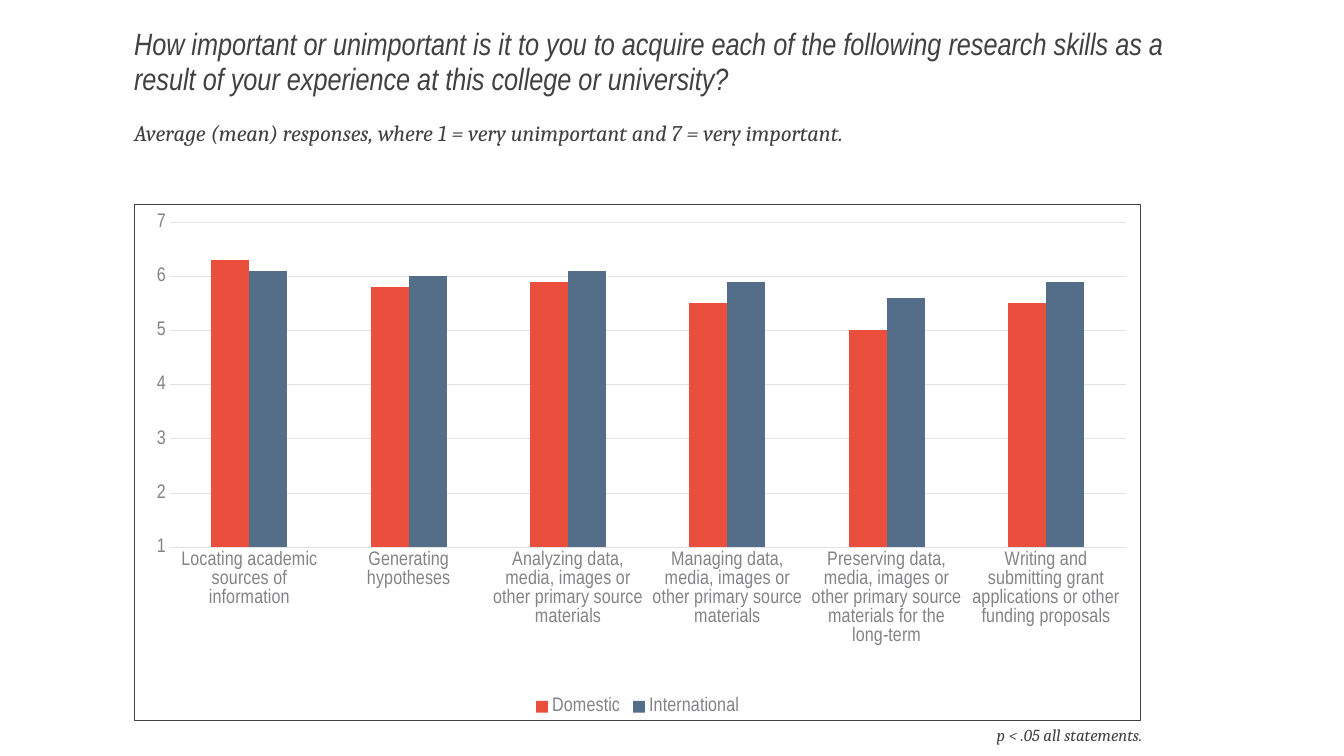
from dataclasses import dataclass

from lxml import etree
from pptx import Presentation
from pptx import util as u
from pptx.chart.data import CategoryChartData
from pptx.dml.color import RGBColor
from pptx.enum import chart as ch
from pptx.enum import text as tx
from pptx.oxml import parse_xml
from pptx.oxml.ns import nsdecls, qn


@dataclass(frozen=True)
class Theme:
    ink: str = "414042"
    grey: str = "838285"
    rule: str = "E2E2E3"
    bars: tuple = ("E94F3C", "546D89")
    sans: str = "Arial Narrow"
    serif: str = "Cambria"
    head: int = 22
    sub: int = 16
    label: int = 14
    note: int = 12
    base: int = 10
    thin: float = 0.75


def assign(item, values):
    for key, value in values.items():
        setattr(item, key, value)


class Deck:
    def __init__(self, theme):
        self.theme = theme
        self.deck = Presentation()
        assign(self.deck, {"slide_width": u.Inches(13.33), "slide_height": u.Inches(7.5)})
        self.slide = self.deck.slides.add_slide(self.deck.slide_layouts[5])

    def font(self, font, name, size, color, italic=False):
        assign(font, {"name": name, "size": u.Pt(size), "bold": False, "italic": italic})
        font.color.rgb = RGBColor.from_string(color)

    def line(self, line, color):
        line.color.rgb = RGBColor.from_string(color)
        line.width = u.Pt(self.theme.thin)

    def fill(self, shape, words, name, size, top=0, low=0, **para):
        frame = shape.text_frame
        assign(frame, {
            "word_wrap": True, "auto_size": tx.MSO_AUTO_SIZE.NONE,
            "vertical_anchor": tx.MSO_ANCHOR.TOP,
            "margin_left": 0, "margin_right": 0,
            "margin_top": u.Inches(top), "margin_bottom": u.Inches(low)})
        first = frame.paragraphs[0]
        assign(first, {"alignment": tx.PP_ALIGN.LEFT, **para})
        run = first.add_run()
        run.text = words
        self.font(run.font, name, size, self.theme.ink, True)
        return frame

    def title(self, box, words):
        shape = self.slide.shapes.title
        assign(shape, dict(zip(("left", "top", "width", "height"), map(u.Inches, box))))
        self.fill(shape, words, self.theme.sans, self.theme.head, line_spacing=0.95)

    def text(self, box, words, size, **form):
        shape = self.slide.shapes.add_textbox(*map(u.Inches, box))
        return self.fill(shape, words, self.theme.serif, size, **form)

    def axis(self, axis, values):
        assign(axis, {"major_tick_mark": ch.XL_TICK_MARK.NONE,
                      "minor_tick_mark": ch.XL_TICK_MARK.NONE, **values})
        self.font(axis.tick_labels.font, self.theme.sans, self.theme.label, self.theme.grey)

    def chart(self, box, names, rows, plot):
        theme = self.theme
        data = CategoryChartData(number_format="General")
        data.categories = names
        for name, values in rows.items():
            data.add_series(name, values)
        chart = self.slide.shapes.add_chart(
            ch.XL_CHART_TYPE.COLUMN_CLUSTERED, *map(u.Inches, box), data).chart
        assign(chart, {"has_title": False, "has_legend": True})
        self.font(chart.font, theme.serif, theme.base, theme.ink)
        assign(chart.legend, {"position": ch.XL_LEGEND_POSITION.BOTTOM,
                              "include_in_layout": False})
        self.font(chart.legend.font, theme.sans, theme.label, theme.grey)

        self.axis(chart.category_axis, {"has_major_gridlines": False})
        self.line(chart.category_axis.format.line, theme.rule)
        scale = chart.value_axis
        self.axis(scale, {"minimum_scale": 1, "maximum_scale": 7, "major_unit": 1,
                          "has_major_gridlines": True})
        scale.format.line.fill.background()
        self.line(scale.major_gridlines.format.line, theme.rule)

        group = chart.plots[0]
        assign(group, {"gap_width": 219, "overlap": 0, "vary_by_categories": False})
        for bar, color in zip(group.series, theme.bars):
            bar.format.fill.solid()
            bar.format.fill.fore_color.rgb = RGBColor.from_string(color)
        self.place(chart, plot)
        self.frame(chart)

    def place(self, chart, plot):
        area = chart._chartSpace.chart.plotArea
        for old in area.findall(qn("c:layout")):
            area.remove(old)
        layout = parse_xml(f'<c:layout {nsdecls("c")}><c:manualLayout/></c:layout>')
        parts = [("layoutTarget", "inner"), ("xMode", "edge"), ("yMode", "edge")]
        for tag, value in parts + list(zip("xywh", plot)):
            etree.SubElement(layout[0], qn(f"c:{tag}")).set("val", str(value))
        area.insert(0, layout)

    def frame(self, chart):
        theme = self.theme
        chart._chartSpace.chart.addnext(parse_xml(
            f'<c:spPr {nsdecls("c", "a")}><a:noFill/><a:ln w="{u.Pt(theme.thin)}">'
            f'<a:solidFill><a:srgbClr val="{theme.ink}"/></a:solidFill></a:ln></c:spPr>'))


def main():
    theme = Theme()
    deck = Deck(theme)
    left, wide = 1.33, 9.99
    deck.title((left, 0.27, 10.66, 0.94),
               "How important or unimportant is it to you to acquire each of the following "
               "research skills as a result of your experience at this college or university?")
    lead = deck.text((left, 0.88, wide, 0.68),
                     "Average (mean) responses, where 1 = very unimportant and 7 = very important.",
                     theme.sub, top=0.3, low=0.11)
    lead.vertical_anchor = tx.MSO_ANCHOR.MIDDLE
    media = "data, media, images or other primary source materials"
    names = ["Locating academic sources of information", "Generating hypotheses",
             f"Analyzing {media}", f"Managing {media}", f"Preserving {media} for the long-term",
             "Writing and submitting grant applications or other funding proposals"]
    rows = {"Domestic": (6.3, 5.8, 5.9, 5.5, 5, 5.5),
            "International": (6.1, 6, 6.1, 5.9, 5.6, 5.9)}
    deck.chart((left, 2.02, wide, 5.13), names, rows, (0.035, 0.035, 0.95, 0.63))
    deck.text((8.99, 7.14, 2.34, 0.3), "p < .05 all statements.", theme.note,
              top=0.05, low=0.05, alignment=tx.PP_ALIGN.RIGHT)
    deck.deck.save("out.pptx")


if __name__ == "__main__":
    main()
